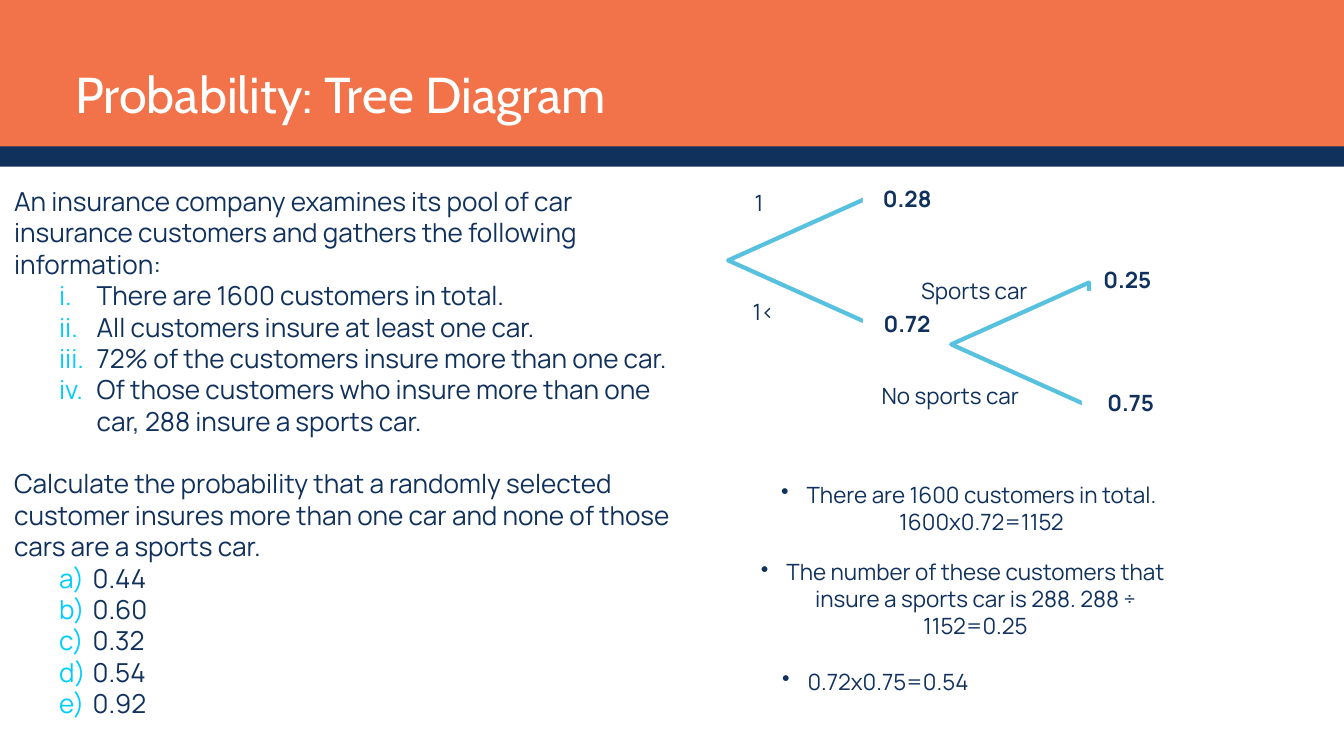
from lxml import etree
from pptx import Presentation
from pptx.dml.color import RGBColor
from pptx.enum import shapes, text
from pptx.oxml import ns
from pptx.util import Inches, Pt

COLORS = {"orange": "F27349", "navy": "10315C", "blue": "57C1DF",
          "cyan": "00CDFF", "white": "FFFFFF"}
BODY_FONT = "Manrope"
FACTS = ["There are 1600 customers in total.",
         "All customers insure at least one car.",
         "72% of the customers insure more than one car.",
         "Of those customers who insure more than one car, 288 insure a sports car."]
ANSWERS = ["0.44", "0.60", "0.32", "0.54", "0.92"]


def rgb(name):
    """Return the named colour."""
    return RGBColor.from_string(COLORS[name])


def add_block(slide, left, top, width, height, color):
    """Add a filled rectangle without an outline."""
    sp = slide.shapes.add_shape(shapes.MSO_SHAPE.RECTANGLE, Inches(left), Inches(top),
                                Inches(width), Inches(height))
    sp.shadow.inherit = False
    sp.fill.solid()
    sp.fill.fore_color.rgb = rgb(color)
    sp.line.fill.background()


def add_fork(slide, left, top, mask_left, mask_top):
    """Add two branches: a turned triangle with its far side covered."""
    sp = slide.shapes.add_shape(shapes.MSO_SHAPE.FLOWCHART_EXTRACT, Inches(left), Inches(top),
                                Inches(1.84), Inches(2.05))
    sp.rotation = 270
    sp.shadow.inherit = False
    sp.fill.background()
    sp.line.color.rgb = rgb("blue")
    sp.line.width = Pt(4.5)
    add_block(slide, mask_left, mask_top, 0.36, 2.23, "white")


def add_box(slide, left, top, width, height, inset=True):
    """Add an empty wrapping text box and return its text frame."""
    sp = slide.shapes.add_textbox(Inches(left), Inches(top), Inches(width), Inches(height))
    tf = sp.text_frame
    tf.word_wrap = True
    tf.auto_size = text.MSO_AUTO_SIZE.SHAPE_TO_FIT_TEXT
    if not inset:
        tf.margin_left = tf.margin_top = tf.margin_right = tf.margin_bottom = 0
    return tf


def format_text(p, size, color="navy", font=BODY_FONT, bold=False):
    """Format every run of a paragraph."""
    for r in p.runs:
        r.font.size = Pt(size)
        r.font.name = font
        r.font.bold = bold
        r.font.color.rgb = rgb(color)


def add_bullet(p, margin, hang, tag, attribute, value, color="navy"):
    """Give a paragraph a hanging bullet or automatic number."""
    pPr = p._p.get_or_add_pPr()
    pPr.set("marL", str(Inches(margin)))
    pPr.set("indent", str(-Inches(hang)))
    clr = etree.SubElement(pPr, ns.qn("a:buClr"))
    etree.SubElement(clr, ns.qn("a:srgbClr")).set("val", COLORS[color])
    etree.SubElement(pPr, ns.qn(tag)).set(attribute, value)


def add_label(slide, left, top, width, label, bold=False):
    """Add a label of the tree."""
    p = add_box(slide, left, top, width, 0.5).paragraphs[0]
    p.text = label
    format_text(p, 24, bold=bold)


def add_step(slide, left, top, height, step):
    """Add one centred, bulleted step of the solution."""
    p = add_box(slide, left, top, 6.05, height, inset=False).paragraphs[0]
    p.text = step
    p.alignment = text.PP_ALIGN.CENTER
    add_bullet(p, 0.38, 0.38, "a:buChar", "char", "•")
    format_text(p, 24)


def add_title(slide, title):
    """Add the header bands and the title."""
    add_block(slide, 0, 0, 20, 2.43, "orange")
    add_block(slide, 0, 2.18, 20, 0.3, "navy")
    p = add_box(slide, 1.12, 0.53, 17.75, 1.14, inset=False).paragraphs[0]
    p.text = title
    p.line_spacing = Pt(93.8)
    format_text(p, 54, "white", "Cabin")


def add_question(slide):
    """Add the exercise with its numbered facts and lettered answers."""
    tf = add_box(slide, 0.21, 2.76, 9.83, 8.4, inset=False)
    sections = [
        ("An insurance company examines its pool of car insurance customers "
         "and gathers the following information:", FACTS, "romanLcPeriod", 1.23, 0.56),
        ("Calculate the probability that a randomly selected customer insures more than "
         "one car and none of those cars are a sports car.", ANSWERS, "alphaLcParenR", 1.17, 0.5),
    ]
    for i, (intro, items, numbering, margin, hang) in enumerate(sections):
        p = tf.add_paragraph() if i else tf.paragraphs[0]
        p.text = intro
        if i:
            p.space_before = Pt(33.6)
        format_text(p, 28)
        for item in items:
            p = tf.add_paragraph()
            p.text = item
            p.level = 1
            add_bullet(p, margin, hang, "a:buAutoNum", "type", numbering, "cyan")
            format_text(p, 28)


def main():
    """Build and save the slide."""
    prs = Presentation()
    prs.slide_width, prs.slide_height = Inches(20), Inches(11.25)
    s = prs.slides.add_slide(prs.slide_layouts[6])
    add_title(s, "Probability: Tree Diagram")
    add_fork(s, 10.94, 2.85, 12.84, 2.73)
    add_fork(s, 14.26, 4.1, 16.1, 4.33)
    for left, top, value in [(13.04, 2.71, "0.28"), (13.05, 4.57, "0.72"),
                             (16.32, 3.91, "0.25"), (16.38, 5.74, "0.75")]:
        add_label(s, left, top, 1.67, value, bold=True)
    for left, top, width, branch in [(11.13, 2.76, 1.67, "1"), (11.1, 4.39, 1.67, "1<"),
                                     (13.61, 4.08, 2.02, "Sports car"),
                                     (13.02, 5.64, 2.6, "No sports car")]:
        add_label(s, left, top, width, branch)
    add_question(s)
    add_step(s, 11.39, 7.16, 0.81, "There are 1600 customers in total. 1600x0.72=1152")
    add_step(s, 11.3, 8.31, 1.21, "The number of these customers that insure a sports car "
                                  "is 288. 288 ÷ 1152=0.25")
    add_step(s, 10, 9.94, 0.4, "0.72x0.75=0.54")
    prs.save("out.pptx")


if __name__ == "__main__":
    main()
